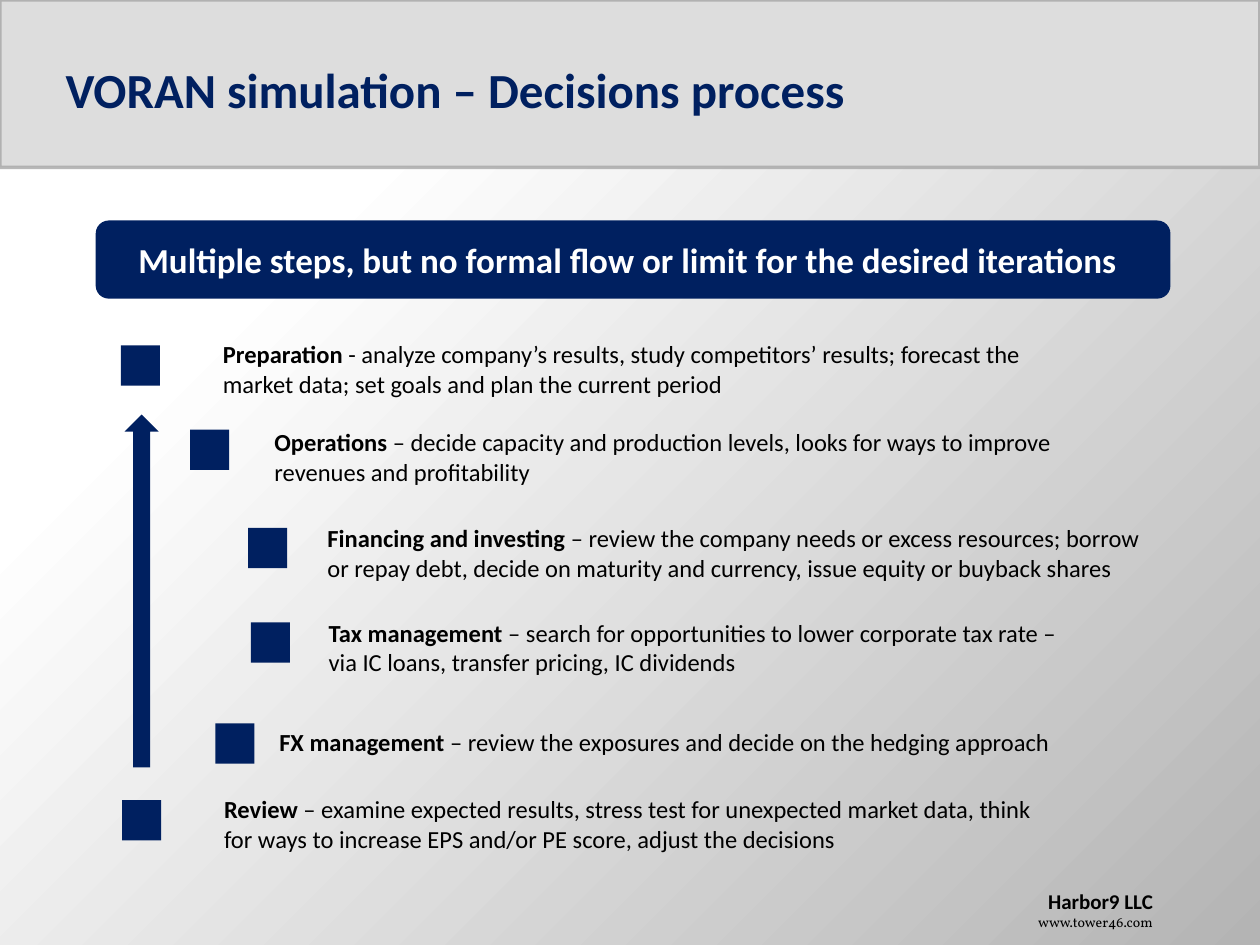
import pptx
import pptx.util
import pptx.dml.color
import pptx.enum.shapes
import pptx.enum.text
import pptx.oxml
import pptx.oxml.ns

Inches, Pt = pptx.util.Inches, pptx.util.Pt
Shape = pptx.enum.shapes.MSO_SHAPE
Align = pptx.enum.text.PP_ALIGN
Anchor = pptx.enum.text.MSO_ANCHOR
NAVY, BLACK, WHITE = "002060", "000000", "FFFFFF"
NS = pptx.oxml.ns.nsdecls("a", "p")

STEPS = [  # marker left, top; text left, top, width; name; detail
    (0.96, 2.74, 1.67, 2.64, 6.97, "Preparation",
     " - analyze company’s results, study competitors’ results; forecast the "
     "market data; set goals and plan the current period"),
    (1.51, 3.41, 2.08, 3.34, 6.7, "Operations",
     " – decide capacity and production levels, looks for ways to improve "
     "revenues and profitability"),
    (1.97, 4.19, 2.5, 4.1, 6.71, "Financing and investing ",
     "– review the company needs or excess resources; borrow or repay debt, "
     "decide on maturity and currency, issue equity or buyback shares"),
    (1.99, 4.94, 2.51, 4.85, 6.23, "Tax management ",
     "– search for opportunities to lower corporate tax rate – "
     "via IC loans, transfer pricing, IC dividends"),
    (1.71, 5.74, 2.12, 5.72, 6.7, "FX management ",
     "– review the exposures and decide on the hedging approach"),
    (0.97, 6.35, 1.68, 6.25, 6.7, "Review ",
     "– examine expected results, stress test for unexpected market data, "
     "think for ways to increase EPS and/or PE score, adjust the decisions"),
]


def color(text):
    return pptx.dml.color.RGBColor.from_string(text)


class Deck:
    face = "Calibri"

    def __init__(self):
        self.file = pptx.Presentation()
        self.file.slide_width, self.file.slide_height = Inches(10), Inches(7.5)
        self.slide = self.file.slides.add_slide(self.file.slide_layouts[5])

    def shade(self, inner, outer):
        """Fill the background with a gradient spreading from the top left."""
        self.slide.element.cSld.insert(0, pptx.oxml.parse_xml(
            f'<p:bg {NS}><p:bgPr><a:gradFill rotWithShape="1"><a:gsLst>'
            f'<a:gs pos="24000"><a:srgbClr val="{inner}"/></a:gs>'
            f'<a:gs pos="100000"><a:srgbClr val="{outer}"/></a:gs></a:gsLst>'
            '<a:path path="circle"><a:fillToRect r="100000" b="100000"/></a:path>'
            '</a:gradFill><a:effectLst/></p:bgPr></p:bg>'))

    def shape(self, kind, box, fill=NAVY):
        item = self.slide.shapes.add_shape(kind, *map(Inches, box))
        item.shadow.inherit = False
        item.fill.solid()
        item.fill.fore_color.rgb = color(fill)
        item.line.fill.background()
        return item

    def band(self, box, fill, edge):
        """Draw the outlined header strip behind everything else."""
        item = self.shape(Shape.RECTANGLE, box, fill)
        item.line.color.rgb = color(edge)
        item.line.width = Pt(2)
        tone = item.line._ln.find(".//" + pptx.oxml.ns.qn("a:srgbClr"))
        tone.append(pptx.oxml.parse_xml(f'<a:alpha {NS} val="78000"/>'))
        self.slide.shapes._spTree.insert(2, item._element)

    def style(self, font, size, tint, bold, face=None):
        font.name, font.size, font.bold = face or self.face, Pt(size), bold
        font.color.rgb = color(tint)

    def title(self, text, box):
        item = self.slide.shapes.title
        item.left, item.top, item.width, item.height = map(Inches, box)
        item.text_frame.text = text
        item.text_frame.vertical_anchor = Anchor.MIDDLE
        para = item.text_frame.paragraphs[0]
        para.alignment = Align.LEFT
        self.style(para.font, 28, NAVY, True)

    def frame(self, box):
        frame = self.slide.shapes.add_textbox(*map(Inches, box)).text_frame
        frame.word_wrap = True
        frame.auto_size = pptx.enum.text.MSO_AUTO_SIZE.SHAPE_TO_FIT_TEXT
        return frame

    def text(self, box, lines, align=Align.LEFT):
        """Add a box of lines, each given as (text, size, tint, bold, face)."""
        frame = self.frame(box)
        for i, (words, *look) in enumerate(lines):
            para = frame.add_paragraph() if i else frame.paragraphs[0]
            para.text, para.alignment = words, align
            self.style(para.font, *look)

    def step(self, x, y, left, top, width, name, detail):
        self.shape(Shape.RECTANGLE, (x, y, 0.31, 0.32))
        single = name.startswith("FX")
        para = self.frame((left, top, width, 0.34 if single else 0.58)).paragraphs[0]
        if not single:
            para.line_spacing = Pt(17)
        for words, bold in ((name, True), (detail, False)):
            run = para.add_run()
            run.text = words
            self.style(run.font, 14, BLACK, bold)


def main():
    deck = Deck()
    deck.shade(WHITE, "B4B4B4")
    deck.band((0, 0, 10, 1.33), "DDDDDD", "A6A6A6")
    deck.title("VORAN simulation – Decisions process", (0.42, 0.08, 9, 1.25))
    deck.shape(Shape.ROUNDED_RECTANGLE, (0.76, 1.75, 8.53, 0.62))
    deck.text((1, 1.84, 8.83, 0.44), [
        ("Multiple steps, but no formal flow or limit for the desired iterations",
         20, WHITE, True)])
    for step in STEPS:
        deck.step(*step)
    deck.shape(Shape.UP_ARROW, (0.99, 3.29, 0.27, 2.8))
    deck.text((8, 7, 1.25, 0.44), [
        ("Harbor9 LLC", 12, BLACK, True),
        ("www.tower46.com", 8, BLACK, False, "Vollkorn")], Align.RIGHT)
    deck.file.save("out.pptx")


if __name__ == "__main__":
    main()
